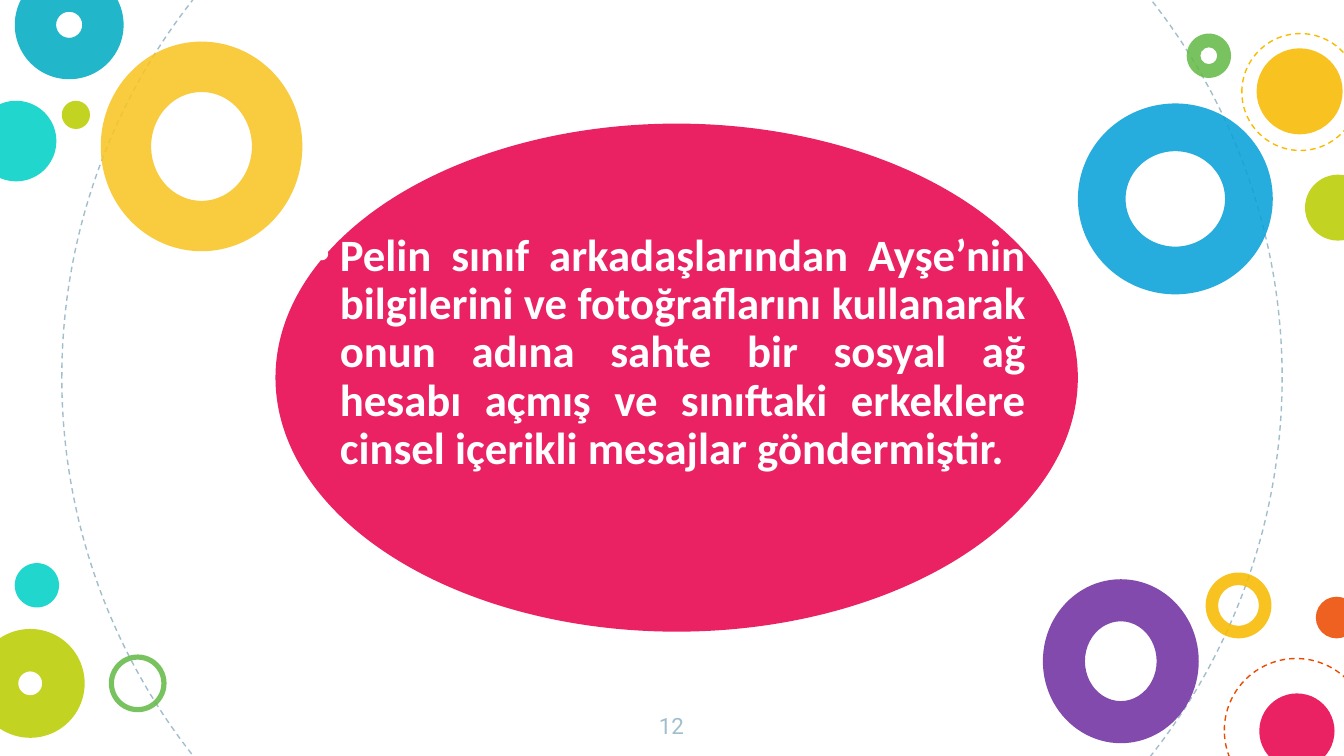
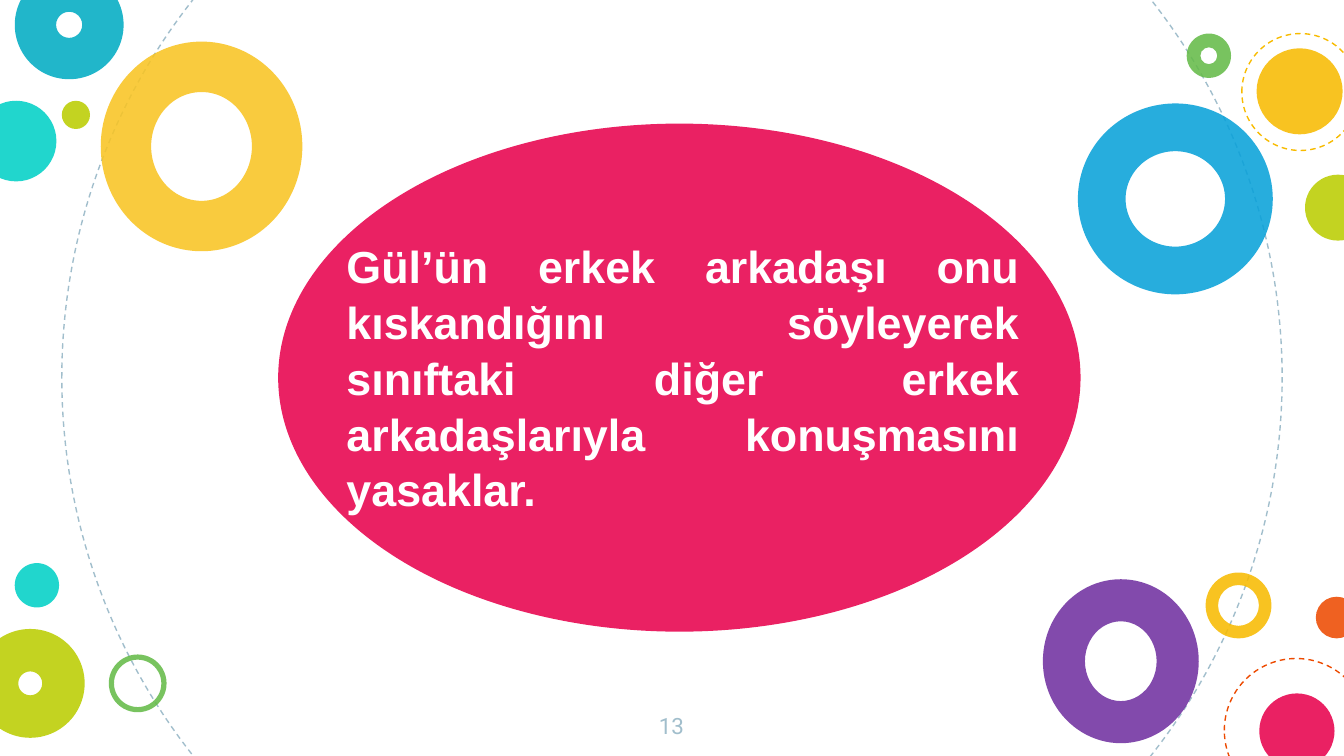
from dataclasses import dataclass
from typing import Optional

from lxml import etree
from pptx import Presentation
from pptx import util as u
from pptx.dml.color import RGBColor
from pptx.enum import dml, shapes, text
from pptx.oxml import ns
from pptx.slide import Slide

SLIDE_WIDTH = u.Inches(10)
SLIDE_HEIGHT = SLIDE_WIDTH * 9 // 16
COLUMNS = 100
CELL = SLIDE_WIDTH // COLUMNS
OPACITY = 87

WHITE = RGBColor(0xFF, 0xFF, 0xFF)
MIST = RGBColor(0xA1, 0xBE, 0xCC)
TURQUOISE = RGBColor(0x00, 0xD1, 0xC6)
TEAL = RGBColor(0x00, 0xAC, 0xC3)
AMBER = RGBColor(0xF8, 0xBB, 0x00)
GOLD = RGBColor(0xF9, 0xC4, 0x22)
LIME = RGBColor(0xBB, 0xCD, 0x00)
GREEN = RGBColor(0x65, 0xBB, 0x48)
ORANGE = RGBColor(0xED, 0x4A, 0x00)
PINK = RGBColor(0xE8, 0x00, 0x4C)
PURPLE = RGBColor(0x70, 0x30, 0xA0)
BLUE = RGBColor(0x08, 0xA1, 0xD9)


@dataclass(frozen=True)
class Area:
    column: float
    row: float
    columns: float
    rows: float

    def box(self) -> tuple[int, ...]:
        return tuple(round(n * CELL) for n in (self.column, self.row, self.columns, self.rows))


@dataclass(frozen=True)
class Circle:
    area: Area
    color: RGBColor
    rim: Optional[float] = None
    dashed: bool = False


@dataclass(frozen=True)
class Lettering:
    font: str
    size: int
    color: RGBColor
    align: text.PP_ALIGN
    bold: bool = False
    spacing: float = 1.0
    bullet: bool = False


@dataclass(frozen=True)
class Case:
    page: int
    oval_column: float
    area: Area
    lettering: Lettering
    story: str


def ring(column: float, row: float, size: float, color: RGBColor,
         rim: Optional[float] = None, dashed: bool = False) -> Circle:
    return Circle(Area(column, row, size, size), color, rim, dashed)


BACKDROP = (
    ring(4.6, -17.3, 90.8, MIST, dashed=True),
    ring(-1.8, 7.5, 6, TURQUOISE),
    ring(89.7, 42.6, 4.9, AMBER, 0.19),
    ring(1.1, -2.2, 8.1, TEAL, 0.38),
    ring(4.6, 7.5, 2.1, LIME),
    ring(91.1, 49, 10.7, ORANGE, dashed=True),
    ring(8.1, 48.7, 4.3, GREEN, 0.09),
    ring(97.9, 44.4, 3.1, ORANGE),
    ring(-1.8, 46.8, 8.1, LIME, 0.39),
    ring(93.7, 51.6, 5.6, PINK),
    ring(88.3, 2.5, 3.3, GREEN, 0.31),
    ring(93.5, 3.6, 6.4, AMBER),
    ring(97.1, 13, 4.9, LIME),
    ring(92.4, 2.5, 8.7, AMBER, dashed=True),
    ring(1.1, 41.9, 3.3, TURQUOISE),
)
LARGE_RINGS = (
    Circle(Area(77.6, 43.1, 11.6, 12.2), PURPLE, 0.27),
    Circle(Area(80.2, 7.7, 14.5, 14.2), BLUE, 0.25),
    Circle(Area(7.5, 3.1, 15, 15.6), GOLD, 0.25),
)
PAGE_AREA = Area(47.4, 52, 5.1, 4.3)
PAGE_LETTERING = Lettering("Roboto", 12, MIST, text.PP_ALIGN.CENTER)

CASES = (
    Case(12, 20.5, Area(22.4, 16.3, 54.9, 24.4),
         Lettering("Calibri", 24, WHITE, text.PP_ALIGN.JUSTIFY, True, 0.9, True),
         "Pelin sınıf arkadaşlarından Ayşe’nin bilgilerini ve fotoğraflarını "
         "kullanarak onun adına sahte bir sosyal ağ hesabı açmış ve sınıftaki "
         "erkeklere cinsel içerikli mesajlar göndermiştir."),
    Case(13, 20.7, Area(24.8, 16.6, 52, 26.8),
         Lettering("Arial", 24, WHITE, text.PP_ALIGN.JUSTIFY, True, 1.04),
         "Gül’ün erkek arkadaşı onu kıskandığını söyleyerek sınıftaki diğer "
         "erkek arkadaşlarıyla konuşmasını yasaklar."),
)


def draw_circle(slide: Slide, circle: Circle) -> None:
    preset = shapes.MSO_SHAPE.OVAL if circle.rim is None else shapes.MSO_SHAPE.DONUT
    shape = slide.shapes.add_shape(preset, *circle.area.box())
    shape.shadow.inherit = False
    if circle.rim is not None:
        shape.adjustments[0] = circle.rim
    if circle.dashed:
        shape.fill.background()
        shape.line.color.rgb = circle.color
        shape.line.width = u.Pt(0.75)
        shape.line.dash_style = dml.MSO_LINE.DASH
        return
    shape.line.fill.background()
    shape.fill.solid()
    shape.fill.fore_color.rgb = circle.color
    tint = shape.fill._xPr.find(ns.qn("a:solidFill"))[0]
    etree.SubElement(tint, ns.qn("a:alpha")).set("val", str(OPACITY * 1000))


def write(slide: Slide, area: Area, wording: str, lettering: Lettering) -> None:
    frame = slide.shapes.add_textbox(*area.box()).text_frame
    frame.word_wrap = True
    frame.margin_left = frame.margin_right = CELL
    frame.margin_top = frame.margin_bottom = CELL
    frame.text = wording
    paragraph = frame.paragraphs[0]
    paragraph.alignment = lettering.align
    paragraph.line_spacing = lettering.spacing
    if lettering.bullet:
        properties = paragraph._p.get_or_add_pPr()
        indent = round(1.9 * CELL)
        properties.set("marL", str(indent))
        properties.set("indent", str(-indent))
        etree.SubElement(properties, ns.qn("a:buFont")).set("typeface", "Arial")
        etree.SubElement(properties, ns.qn("a:buChar")).set("char", "•")
    for run in paragraph.runs:
        run.font.name = lettering.font
        run.font.size = u.Pt(lettering.size)
        run.font.bold = lettering.bold
        run.font.color.rgb = lettering.color


def draw_case(slide: Slide, case: Case) -> None:
    oval = Circle(Area(case.oval_column, 9.2, 59.7, 37.8), PINK)
    for circle in (*BACKDROP, oval):
        draw_circle(slide, circle)
    write(slide, PAGE_AREA, str(case.page), PAGE_LETTERING)
    write(slide, case.area, case.story, case.lettering)
    for circle in LARGE_RINGS:
        draw_circle(slide, circle)


def main() -> None:
    deck = Presentation()
    deck.slide_width = SLIDE_WIDTH
    deck.slide_height = SLIDE_HEIGHT
    for case in CASES:
        draw_case(deck.slides.add_slide(deck.slide_layouts[6]), case)
    deck.save("out.pptx")


if __name__ == "__main__":
    main()
